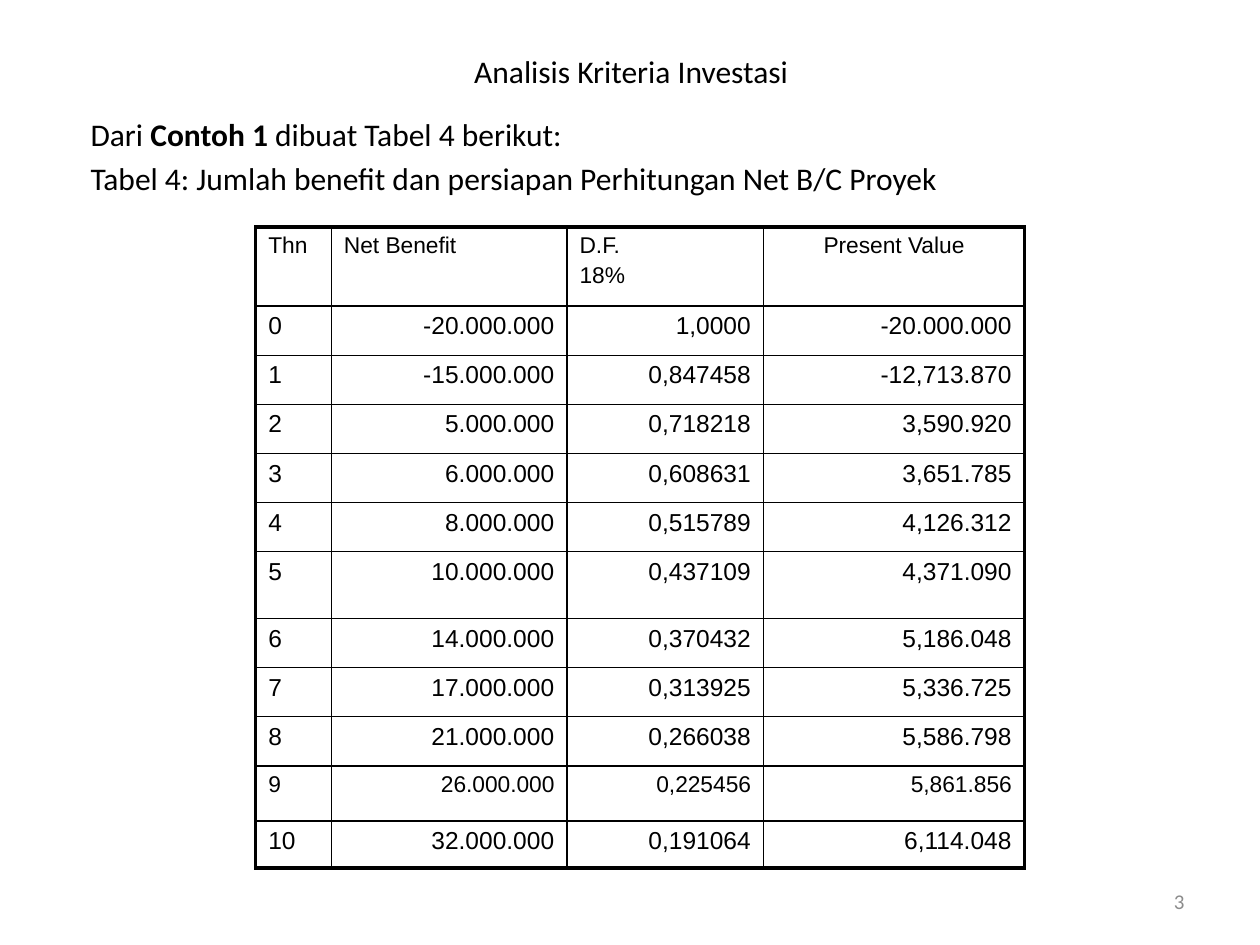
from dataclasses import dataclass

from lxml.etree import SubElement
from pptx import Presentation
from pptx.dml.color import RGBColor
from pptx.enum.text import MSO_ANCHOR as Anchor, PP_ALIGN as Align
from pptx.oxml.ns import qn
from pptx.util import Inches, Pt


@dataclass(frozen=True)
class Theme:
    black: str = "000000"
    gray: str = "8C8C8C"
    white: str = "FFFFFF"
    text_font: str = "Calibri"
    table_font: str = "Arial"
    text_size: float = 18
    number_size: float = 12
    table_size: float = 14
    small_size: float = 13
    outer_line: float = 2.25
    inner_line: float = 1


theme = Theme()


def add_run(paragraph, text, size, font, color=theme.black, bold=False):
    run = paragraph.add_run()
    run.text = text
    run.font.size = Pt(size)
    run.font.name = font
    run.font.bold = bold
    run.font.color.rgb = RGBColor.from_string(color)


def add_text_frame(left, top, width, height, anchor):
    shape = slide.shapes.add_textbox(Inches(left), Inches(top), Inches(width), Inches(height))
    shape.text_frame.word_wrap = True
    shape.text_frame.vertical_anchor = anchor
    return shape.text_frame


presentation = Presentation()
presentation.slide_width = Inches(10)
presentation.slide_height = Inches(7.5)
slide = presentation.slides.add_slide(presentation.slide_layouts[6])

page_number = add_text_frame(7.17, 6.95, 2.33, 0.4, Anchor.MIDDLE).paragraphs[0]
page_number.alignment = Align.RIGHT
add_run(page_number, "3", theme.number_size, theme.text_font, theme.gray)

title = add_text_frame(0.51, 0.28, 9, 0.57, Anchor.MIDDLE).paragraphs[0]
title.alignment = Align.CENTER
add_run(title, "Analisis Kriteria Investasi", theme.text_size, theme.text_font)

intro_lines = [
    [("Dari ", False), ("Contoh 1 ", True), ("dibuat Tabel 4 berikut:", False)],
    [("Tabel 4: Jumlah benefit dan persiapan Perhitungan Net B/C Proyek", False)],
]
body = add_text_frame(0.62, 0.86, 8.91, 6.25, Anchor.TOP)
for index, line in enumerate(intro_lines):
    paragraph = body.add_paragraph() if index else body.paragraphs[0]
    paragraph.space_before = Pt(0.2 * theme.text_size)
    properties = paragraph._p.get_or_add_pPr()
    properties.set("marL", str(Inches(0.67)))
    properties.set("indent", str(-Inches(0.67)))
    for text, bold in line:
        add_run(paragraph, text, theme.text_size, theme.text_font, bold=bold)

rows = [
    ("Thn", "Net Benefit", "D.F.\n18%", "Present Value"),
    ("0", "-20.000.000", "1,0000", "-20.000.000"),
    ("1", "-15.000.000", "0,847458", "-12,713.870"),
    ("2", "5.000.000", "0,718218", "3,590.920"),
    ("3", "6.000.000", "0,608631", "3,651.785"),
    ("4", "8.000.000", "0,515789", "4,126.312"),
    ("5", "10.000.000", "0,437109", "4,371.090"),
    ("6", "14.000.000", "0,370432", "5,186.048"),
    ("7", "17.000.000", "0,313925", "5,336.725"),
    ("8", "21.000.000", "0,266038", "5,586.798"),
    ("9", "26.000.000", "0,225456", "5,861.856"),
    ("10", "32.000.000", "0,191064", "6,114.048"),
]
column_widths = [0.6, 1.87, 1.56, 2.07]
special_heights = {0: 0.63, 6: 0.53, 10: 0.44, 11: 0.37}
small_rows = {0, 10}
header_alignments = [Align.LEFT, Align.LEFT, Align.LEFT, Align.CENTER]
value_alignments = [Align.LEFT, Align.RIGHT, Align.RIGHT, Align.RIGHT]
last_row, last_column = len(rows) - 1, len(column_widths) - 1

table = slide.shapes.add_table(
    len(rows), len(column_widths), Inches(2.03), Inches(1.8), Inches(6.09), Inches(5.08)
).table
table.first_row = False
table.horz_banding = False
for column, width in zip(table.columns, column_widths):
    column.width = Inches(width)

for row_index, values in enumerate(rows):
    table.rows[row_index].height = Inches(special_heights.get(row_index, 0.39))
    size = theme.small_size if row_index in small_rows else theme.table_size
    alignments = value_alignments if row_index else header_alignments
    for column_index, value in enumerate(values):
        cell = table.cell(row_index, column_index)
        for line_index, text in enumerate(value.split("\n")):
            frame = cell.text_frame
            paragraph = frame.add_paragraph() if line_index else frame.paragraphs[0]
            paragraph.alignment = alignments[column_index]
            paragraph.space_before = Pt(0.2 * size)
            add_run(paragraph, text, size, theme.table_font)
        outer_edges = {
            "a:lnL": column_index == 0,
            "a:lnR": column_index == last_column,
            "a:lnT": row_index == 0,
            "a:lnB": row_index == last_row,
        }
        cell_properties = cell._tc.get_or_add_tcPr()
        for tag, is_outer in outer_edges.items():
            line_width = theme.outer_line if is_outer else theme.inner_line
            border = SubElement(cell_properties, qn(tag), w=str(Pt(line_width)))
            fill = SubElement(border, qn("a:solidFill"))
            SubElement(fill, qn("a:srgbClr"), val=theme.black)
        cell.fill.solid()
        cell.fill.fore_color.rgb = RGBColor.from_string(theme.white)

presentation.save("out.pptx")
